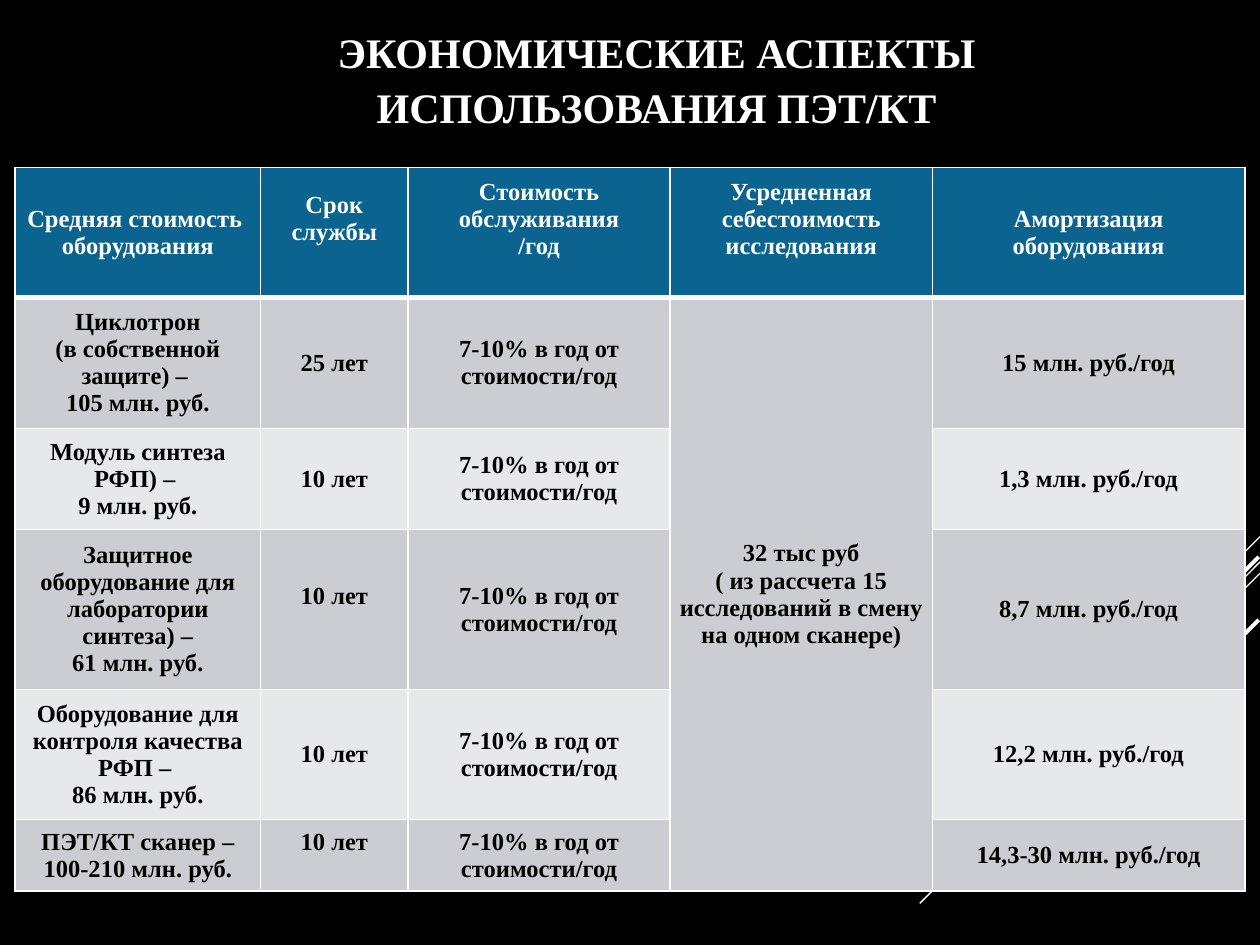
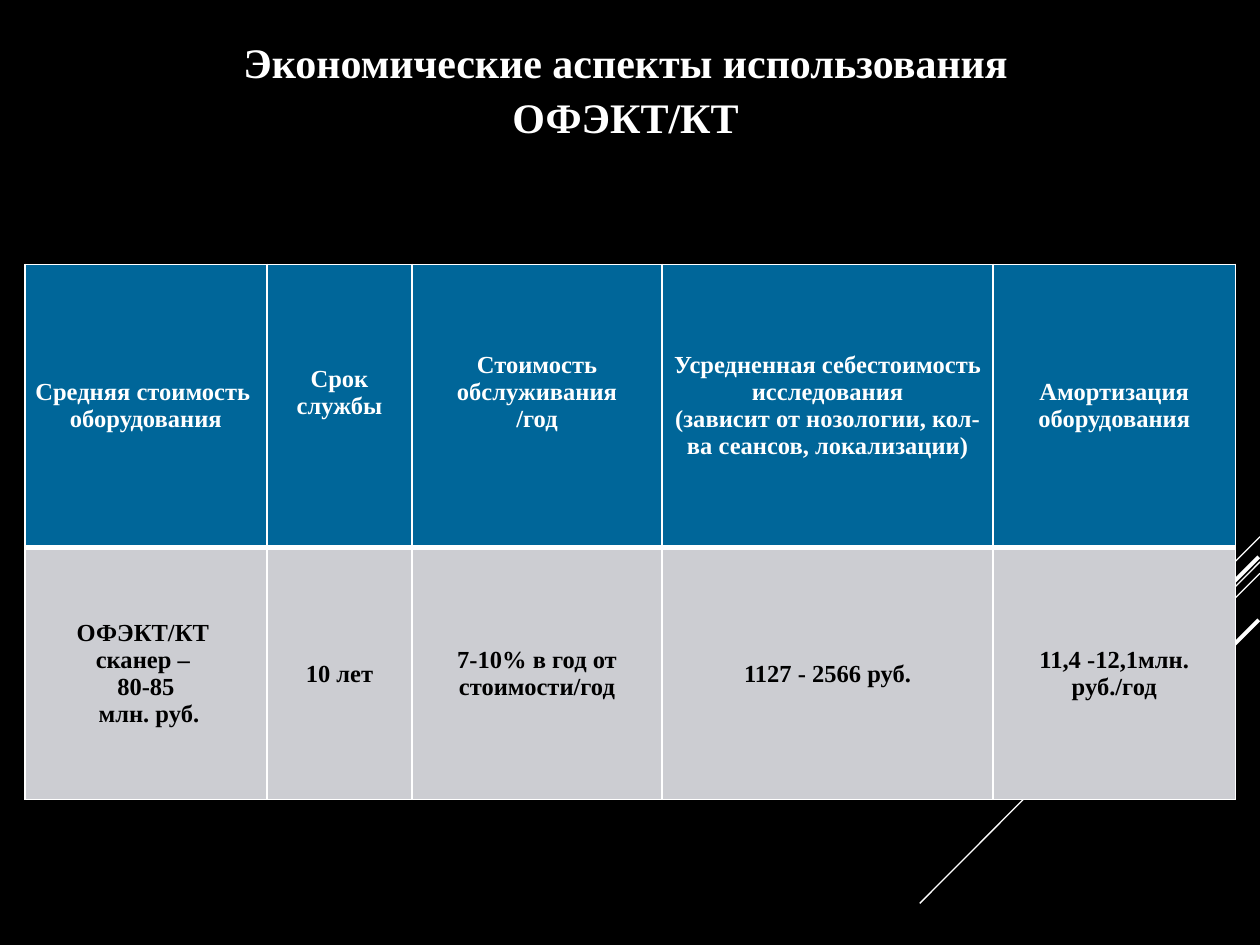
from lxml.etree import SubElement
from pptx import Presentation
from pptx.dml.color import RGBColor
from pptx.enum.shapes import MSO_CONNECTOR as CONNECTOR
from pptx.enum.text import MSO_ANCHOR as ANCHOR, PP_ALIGN as ALIGN
from pptx.oxml import parse_xml
from pptx.oxml.ns import nsdecls, qn
from pptx.util import Pt

# Shared look
FONT = "Times New Roman"
WHITE, BLACK = "FFFFFF", "000000"
BANDS = ["CCCDD2", "E7E8EA"]
INSET_X, INSET_Y = 5.04, 3.6
LIFT = 15.5  # one text line, raises some centred cells

# Diagonal lines: x1, y1, x2, y2, width
DIAGONALS = [
    (720, 306.7, 660.2, 366.5, 0.75),
    (720, 321.1, 525.6, 516.2, 0.75),
    (720, 327.6, 596.2, 451.4, 0.75),
    (719.3, 318.2, 606.2, 431.3, 2.25),
    (719.3, 354.2, 637.2, 436.3, 2.25),
]

HEADERS = [
    "Средняя стоимость \nоборудования",
    "Срок службы",
    "Стоимость обслуживания\n/год",
    "Усредненная себестоимость исследования",
    "Амортизация оборудования",
]
UPKEEP = "7-10% в год от стоимости/год"

PAGES = [
    {
        "title": "ЭКОНОМИЧЕСКИЕ АСПЕКТЫ ИСПОЛЬЗОВАНИЯ ПЭТ/КТ",
        "title_at": (42.5, 9.4, 629.3, 65.5),
        "indent": 36,
        "table_at": (8.6, 95.6),
        "columns": [140.4, 84.2, 149.8, 149.8, 178.6],
        "heights": [74.4, 74.9, 57.6, 91.4, 74.4, 40.6],
        "header_fill": "0B638F",
        "lifted": [(0, 1), (0, 2), (0, 3), (3, 1), (5, 1)],
        "merge": ((1, 3), (5, 3)),
        "rows": [
            HEADERS,
            ["Циклотрон\n(в собственной защите) – \n105 млн. руб.", "25 лет", UPKEEP,
             "32 тыс руб\n( из рассчета 15 исследований в смену на одном сканере)",
             "15 млн. руб./год"],
            ["Модуль синтеза РФП) – \n9 млн. руб.", "10 лет", UPKEEP, "",
             "1,3 млн. руб./год"],
            ["Защитное оборудование для лаборатории синтеза) –\n61 млн. руб.", "10 лет",
             UPKEEP, "", "8,7 млн. руб./год"],
            ["Оборудование для контроля качества РФП – \n86 млн. руб.", "10 лет",
             UPKEEP, "", "12,2 млн. руб./год"],
            ["ПЭТ/КТ сканер – 100-210 млн. руб.", "10 лет", UPKEEP, "",
             "14,3-30 млн. руб./год"],
        ],
    },
    {
        "title": "Экономические аспекты использования\nОФЭКТ/КТ",
        "title_at": (14.4, 15.1, 686.2, 65.5),
        "indent": 0,
        "table_at": (14.2, 151),
        "columns": [138.4, 82.8, 143, 189.2, 138.4],
        "heights": [162, 144],
        "header_fill": "006699",
        "lifted": [(0, 1), (0, 2)],
        "merge": None,
        "rows": [
            HEADERS[:3]
            + [HEADERS[3] + "\n(зависит от нозологии, кол-ва сеансов, локализации)"]
            + HEADERS[4:],
            ["ОФЭКТ/КТ \nсканер – \n80-85\n млн. руб.", "10 лет", UPKEEP,
             "1127 - 2566 руб.", "11,4 -12,1млн. руб./год"],
        ],
    },
]


def rgb(color):
    return RGBColor.from_string(color)


def write(frame, text, size, color):
    frame.text = text
    for para in frame.paragraphs:
        para.alignment = ALIGN.CENTER
        for span in para.runs:
            span.font.name = FONT
            span.font.size = Pt(size)
            span.font.bold = True
            span.font.color.rgb = rgb(color)


deck = Presentation()
deck.slide_width, deck.slide_height = Pt(720), Pt(540)

for content in PAGES:
    page = deck.slides.add_slide(deck.slide_layouts[6])
    page.background.fill.solid()
    page.background.fill.fore_color.rgb = rgb(BLACK)

    # Diagonal lines in the corner
    for *ends, width in DIAGONALS:
        line = page.shapes.add_connector(CONNECTOR.STRAIGHT, *map(Pt, ends))
        line.line.color.rgb = rgb(WHITE)
        line.line.width = Pt(width)
        SubElement(line._element.spPr, qn("a:effectLst"))

    # Title
    box = page.shapes.add_textbox(*map(Pt, content["title_at"]))
    frame = box.text_frame
    frame.word_wrap = True
    frame.margin_left = Pt(7.2 + content["indent"])
    write(frame, content["title"], 24, WHITE)
    for para in frame.paragraphs:
        para.line_spacing = 1.08

    # Table
    rows, columns, heights = content["rows"], content["columns"], content["heights"]
    table = page.shapes.add_table(
        len(rows), len(columns), *map(Pt, content["table_at"]),
        Pt(sum(columns)), Pt(sum(heights))).table
    for column, width in zip(table.columns, columns):
        column.width = Pt(width)
    for row, height in zip(table.rows, heights):
        row.height = Pt(height)
    if content["merge"]:
        first, last = content["merge"]
        table.cell(*first).merge(table.cell(*last))

    # Cells: text, band fill and white borders, thick under the header
    for r, texts in enumerate(rows):
        for c, text in enumerate(texts):
            cell = table.cell(r, c)
            if not cell.is_spanned:
                write(cell.text_frame, text, 14, BLACK if r else WHITE)
            cell.vertical_anchor = ANCHOR.MIDDLE
            cell.margin_left = cell.margin_right = Pt(INSET_X)
            cell.margin_top = Pt(INSET_Y)
            cell.margin_bottom = Pt(INSET_Y + LIFT * ((r, c) in content["lifted"]))
            fill = BANDS[(r - 1) % 2] if r else content["header_fill"]
            cell.fill.solid()
            cell.fill.fore_color.rgb = rgb(fill)
            borders = {"L": 1, "R": 1, "T": 3 if r == 1 else 1, "B": 1 if r else 3}
            for position, (side, width) in enumerate(borders.items()):
                cell._tc.tcPr.insert(position, parse_xml(
                    f'<a:ln{side} {nsdecls("a")} w="{Pt(width)}"><a:solidFill>'
                    f'<a:srgbClr val="{WHITE}"/></a:solidFill></a:ln{side}>'))

deck.save("out.pptx")
